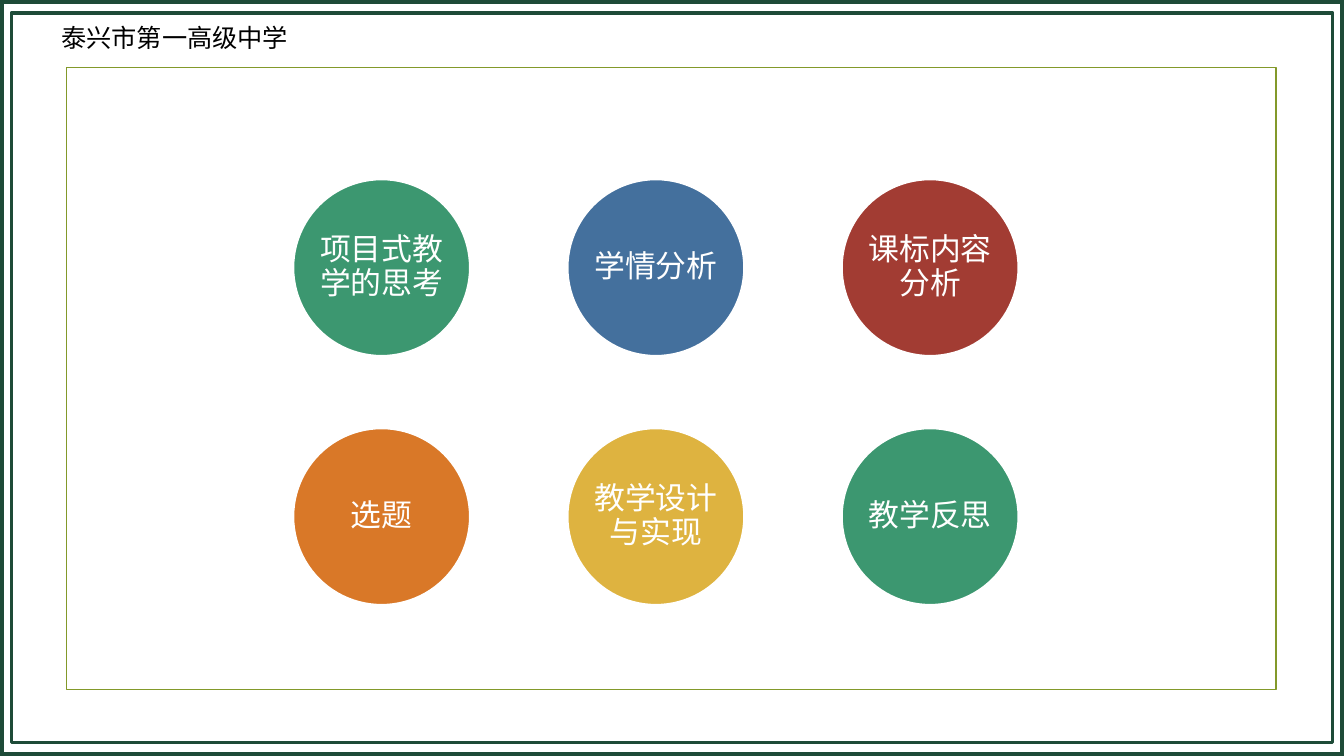
import pptx
import pptx.util
import pptx.dml.color
import pptx.enum.shapes
import pptx.enum.text

Inches = pptx.util.Inches
Pt = pptx.util.Pt
RGBColor = pptx.dml.color.RGBColor
Kind = pptx.enum.shapes.MSO_SHAPE
Align = pptx.enum.text.PP_ALIGN
Anchor = pptx.enum.text.MSO_ANCHOR

WHITE = RGBColor(0xFF, 0xFF, 0xFF)
BLACK = RGBColor(0x00, 0x00, 0x00)
OLIVE = RGBColor(0x83, 0x99, 0x2A)
PINE = RGBColor(0x1E, 0x4B, 0x38)
GREEN = RGBColor(0x3C, 0x97, 0x70)
BLUE = RGBColor(0x44, 0x70, 0x9D)
RED = RGBColor(0xA2, 0x3C, 0x33)
ORANGE = RGBColor(0xD9, 0x78, 0x28)
GOLD = RGBColor(0xDE, 0xB3, 0x40)


def add_shape(kind, box, line, width, fill=None):
    shape = slide.shapes.add_shape(kind, *map(Inches, box))
    shape.shadow.inherit = False
    shape.line.color.rgb = line
    shape.line.width = Pt(width)
    if fill is None:
        shape.fill.background()
    else:
        shape.fill.solid()
        shape.fill.fore_color.rgb = fill
    return shape


def set_text(shape, text, size, color, frame_style, para_style):
    frame = shape.text_frame
    for key, value in frame_style.items():
        setattr(frame, key, value)
    para = frame.paragraphs[0]
    for key, value in para_style.items():
        setattr(para, key, value)
    run = para.add_run()
    run.text = text
    run.font.name = "Times New Roman"
    run.font.size = Pt(size)
    run.font.color.rgb = color


deck = pptx.Presentation()
deck.slide_width = Inches(13.33)
deck.slide_height = Inches(7.5)
slide = deck.slides.add_slide(deck.slide_layouts[6])

frames = [
    ((0.66, 0.67, 12, 6.17), OLIVE, 1.25),
    ((0, 0, 13.33, 7.5), PINE, 6),
    ((0.11, 0.13, 13.11, 7.24), PINE, 2.25),
]
for box, color, width in frames:
    add_shape(Kind.RECTANGLE, box, color, width)

school = slide.shapes.add_textbox(*map(Inches, (0.51, 0.17, 2.87, 0.4)))
set_text(school, "泰兴市第一高级中学", 18, BLACK, {"word_wrap": True}, {})

topics = [
    ("项目式教学的思考", GREEN),
    ("学情分析", BLUE),
    ("课标内容分析", RED),
    ("选题", ORANGE),
    ("教学设计与实现", GOLD),
    ("教学反思", GREEN),
]
circle_frame = {
    "word_wrap": True,
    "vertical_anchor": Anchor.MIDDLE,
    "margin_left": 0,
    "margin_right": 0,
    "margin_top": 0,
    "margin_bottom": 0,
}
circle_para = {"alignment": Align.CENTER, "line_spacing": 0.9}
for index, (topic, color) in enumerate(topics):
    row, col = divmod(index, 3)
    box = (2.91 + 2.72 * col, 1.78 + 2.47 * row, 1.75, 1.75)
    circle = add_shape(Kind.OVAL, box, WHITE, 1.25, color)
    set_text(circle, topic, 22, WHITE, circle_frame, circle_para)

deck.save("out.pptx")
